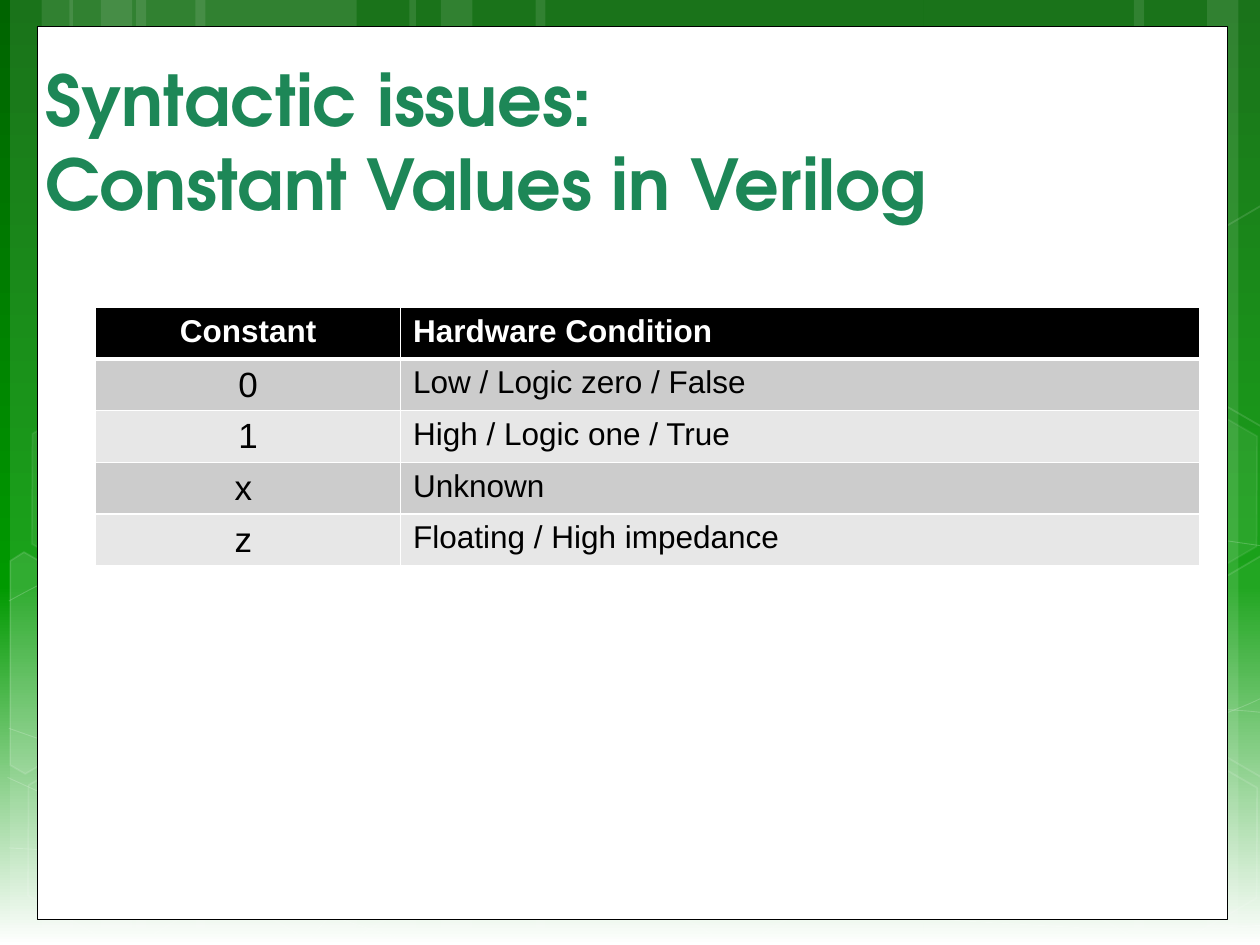
from dataclasses import dataclass
from math import cos, radians, sin

from lxml.etree import SubElement
from pptx import Presentation
from pptx.dml.color import RGBColor as Rgb
from pptx.enum.shapes import MSO_SHAPE as Preset
from pptx.enum.text import MSO_ANCHOR as Anchor, PP_ALIGN as Align
from pptx.oxml import parse_xml
from pptx.oxml.ns import nsdecls, qn
from pptx.util import Cm, Pt


@dataclass(frozen=True)
class Theme:
    white: str = "FFFFFF"
    black: str = "000000"
    title: str = "1D8757"
    rows: tuple = ("CCCCCC", "E7E7E7")
    backdrop: tuple = ((0, "006400"), (0.62, "009900"), (1, "FFFFFF"))
    title_font: str = "TeX Gyre Adventor"
    body_font: str = "Arial"
    title_size: int = 40
    body_size: int = 18
    symbol_size: int = 20


@dataclass(frozen=True)
class Band:
    left: float
    width: float


@dataclass(frozen=True)
class Hexagon:
    left: float
    top: float
    fill_alpha: int
    line_alpha: int


@dataclass(frozen=True)
class CutHexagon:
    center: tuple
    points: tuple
    fill_alpha: int


THEME = Theme()
CM_PER_UNIT = 2.54
PAGE_WIDTH, PAGE_HEIGHT = 10, 7.5
TILT = 30

BANDS = [Band(*values) for values in (
    (1.08, 1.75), (0.08, 0.5), (0.33, 0.83), (1.55, 1.75), (0.55, 0.5), (0.8, 0.83),
    (7.33, 1.75), (9.58, 0.5), (9, 0.83), (4.25, 3.08), (3.25, 0.5), (3.5, 0.83))]

CURVES = [
    ((0.07, 6.73), (0.61, 6.76), (1.15, 6.79), (1.9, 6.78), (2.65, 6.77), (3.58, 6.75), (4.58, 6.65),
     (5.58, 6.55), (7, 6.36), (7.92, 6.17), (8.83, 5.98), (9.77, 5.68), (10.07, 5.51)),
    ((0.07, 4.77), (0.36, 4.61), (0.65, 4.46), (1.21, 4.31), (1.78, 4.16), (2.59, 3.94), (3.47, 3.87),
     (4.36, 3.8), (5.44, 3.79), (6.54, 3.87), (7.64, 3.95), (9.47, 4.26), (10.07, 4.34)),
    ((0.06, 6.17), (1.27, 6.72), (2.47, 7.27), (3.34, 7.49)),
    ((0.07, 5.78), (0.38, 5.89), (0.7, 6), (1.28, 6.16), (1.86, 6.31), (2.73, 6.56), (3.57, 6.73),
     (4.4, 6.9), (5.45, 7.08), (6.28, 7.18), (7.11, 7.29), (8, 7.33), (8.53, 7.36),
     (9.05, 7.4), (9.19, 7.38), (9.45, 7.38), (9.71, 7.37), (9.89, 7.35), (10.07, 7.34)),
    ((2.42, 7.49), (2.6, 7.29), (2.78, 7.09), (3.02, 6.91), (3.26, 6.73), (3.6, 6.53), (3.88, 6.39),
     (4.16, 6.25), (4.33, 6.19), (4.7, 6.09), (5.06, 5.99), (5.73, 5.85), (6.08, 5.78),
     (6.44, 5.71), (6.49, 5.71), (6.8, 5.69), (7.11, 5.66), (7.6, 5.63), (7.94, 5.62),
     (8.29, 5.61), (8.86, 5.62), (8.86, 5.62), (9.08, 5.62), (9.31, 5.62), (9.53, 5.62),
     (9.71, 5.63), (9.88, 5.64), (9.97, 5.65), (10.06, 5.66), (10.03, 5.65), (10.06, 5.66)),
]

HEXAGONS = [Hexagon(*values) for values in (
    (4.97, 5.89, 6, 12), (0.11, 5.91, 0, 12), (0.14, 3.12, 7, 8),
    (1.74, 5.92, 0, 12), (8.34, 5.93, 0, 12), (8.34, 3.14, 7, 8))]

CUT_HEXAGONS = [CutHexagon(*values) for values in (
    ((0.36, 5.35), ((0.08, 4.45), (0.19, 4.38), (0.96, 4.82), (0.95, 5.7), (0.2, 6.14), (0.08, 6.07)), 10),
    ((9.85, 5.2), ((9.26, 4.85), (10.01, 4.41), (10.09, 4.46), (10.09, 6.13), (10.02, 6.17), (9.26, 5.73)), 4),
    ((9.85, 2.41), ((9.26, 2.07), (10.01, 1.63), (10.1, 1.68), (10.09, 3.35), (10.02, 3.39), (9.26, 2.95)), 0),
)]

TITLE = ("Syntactic issues:", "Constant Values in Verilog")
CONSTANTS = [
    ("Constant", "Hardware Condition"),
    ("0", "Low / Logic zero / False"),
    ("1", "High / Logic one / True"),
    ("x ", "Unknown"),
    ("z ", "Floating / High impedance"),
]


def units(*values: float) -> list:
    return [Cm(CM_PER_UNIT * value) for value in values]


def set_alpha(color_parent, percent: int) -> None:
    if percent < 100:
        color = color_parent.find(".//" + qn("a:srgbClr"))
        SubElement(color, qn("a:alpha")).set("val", str(percent * 1000))


def style_shape(shape, fill_alpha: int = 0, line_alpha: int = 0,
                line_width: float = 1, line_color: str = THEME.white) -> None:
    shape.shadow.inherit = False
    properties = shape.element.spPr
    if fill_alpha:
        shape.fill.solid()
        shape.fill.fore_color.rgb = Rgb.from_string(THEME.white)
        set_alpha(properties.find(qn("a:solidFill")), fill_alpha)
    else:
        shape.fill.background()
    if line_alpha:
        shape.line.color.rgb = Rgb.from_string(line_color)
        shape.line.width = Pt(line_width)
        set_alpha(properties.find(qn("a:ln")), line_alpha)
    else:
        shape.line.fill.background()


def paint_background(page) -> None:
    fill = page.background.fill
    fill.gradient()
    fill.gradient_angle = 270
    stops = page.element.find(".//" + qn("a:gsLst"))
    for stop in list(stops):
        stops.remove(stop)
    for position, color in THEME.backdrop:
        stop = SubElement(stops, qn("a:gs"), pos=str(round(position * 100000)))
        SubElement(stop, qn("a:srgbClr"), val=color)


def draw_outline(page, points, closed: bool):
    start, *rest = [units(*point) for point in points]
    builder = page.shapes.build_freeform(*start)
    builder.add_line_segments(rest, close=closed)
    return builder.convert_to_shape()


def draw_curve(page, knots: tuple):
    curve = draw_outline(page, knots, False)
    segments = list(curve.element.iter(qn("a:lnTo")))
    for first in range(0, len(segments), 3):
        trio = segments[first:first + 3]
        bezier = SubElement(trio[0].getparent(), qn("a:cubicBezTo"))
        for segment in trio:
            bezier.append(segment[0])
            segment.getparent().remove(segment)
    return curve


def draw_cut_hexagon(page, item: CutHexagon) -> None:
    cosine, sine = cos(radians(TILT)), sin(radians(TILT))
    middle_x, middle_y = item.center
    offsets = [(x - middle_x, y - middle_y) for x, y in item.points]
    level = [(middle_x + x * cosine + y * sine, middle_y - x * sine + y * cosine) for x, y in offsets]
    hexagon = draw_outline(page, level, True)
    hexagon.rotation = TILT
    style_shape(hexagon, item.fill_alpha, 12)


def draw_backdrop(page) -> None:
    for band in BANDS:
        box = page.shapes.add_shape(Preset.RECTANGLE, *units(band.left, 0, band.width, PAGE_HEIGHT))
        style_shape(box, fill_alpha=10)
    for knots in CURVES:
        style_shape(draw_curve(page, knots), line_alpha=20, line_width=0.5)
    for item in HEXAGONS:
        hexagon = page.shapes.add_shape(Preset.HEXAGON, *units(item.left, item.top, 1.75, 1.52))
        hexagon.rotation = TILT
        hexagon.adjustments[0] = 0.285
        style_shape(hexagon, item.fill_alpha, item.line_alpha)
    for item in CUT_HEXAGONS:
        draw_cut_hexagon(page, item)
    panel = page.shapes.add_shape(Preset.RECTANGLE, *units(0.3, 0.21, 9.44, 7.09))
    style_shape(panel, 100, 100, 0.5, THEME.black)


def add_span(para, text: str, color: str, name: str, size: int, bold: bool) -> None:
    span = para.add_run()
    span.text = text
    for key, value in {"name": name, "size": Pt(size), "bold": bold}.items():
        setattr(span.font, key, value)
    span.font.color.rgb = Rgb.from_string(color)


def draw_title(page) -> None:
    frame = page.shapes.add_textbox(*units(0.26, 0.26, 9.46, 1.57)).text_frame
    for key, value in {"word_wrap": True, "vertical_anchor": Anchor.BOTTOM}.items():
        setattr(frame, key, value)
    para = frame.paragraphs[0]
    for index, line in enumerate(TITLE):
        if index:
            para.add_line_break()
        add_span(para, line, THEME.title, THEME.title_font, THEME.title_size, True)


def set_borders(cell, widths: dict) -> None:
    properties = cell._tc.get_or_add_tcPr()
    for index, (side, width) in enumerate(widths.items()):
        properties.insert(index, parse_xml(
            f'<a:ln{side} {nsdecls("a")} w="{Pt(width)}"><a:solidFill>'
            f'<a:srgbClr val="{THEME.white}"/></a:solidFill></a:ln{side}>'))


def draw_constants(page) -> None:
    table = page.shapes.add_table(len(CONSTANTS), 2, *units(0.76, 2.44, 8.76, 2.05)).table
    for column, width in zip(table.columns, units(2.42, 6.34)):
        column.width = width
    for row, texts in enumerate(CONSTANTS):
        header = row == 0
        for column, text in enumerate(texts):
            cell = table.cell(row, column)
            cell.margin_bottom = Cm(0.05)
            cell.fill.solid()
            cell.fill.fore_color.rgb = Rgb.from_string(THEME.black if header else THEME.rows[(row - 1) % 2])
            set_borders(cell, {"L": 1, "R": 1, "T": 3 if row == 1 else 1, "B": 3 if header else 1})
            para = cell.text_frame.paragraphs[0]
            para.alignment = Align.LEFT if column else Align.CENTER
            size = THEME.body_size if header or column else THEME.symbol_size
            add_span(para, text, THEME.white if header else THEME.black, THEME.body_font, size, header)


def main() -> None:
    deck = Presentation()
    deck.slide_width, deck.slide_height = units(PAGE_WIDTH, PAGE_HEIGHT)
    page = deck.slides.add_slide(deck.slide_layouts[6])
    paint_background(page)
    draw_backdrop(page)
    draw_title(page)
    draw_constants(page)
    deck.save("out.pptx")


if __name__ == "__main__":
    main()
